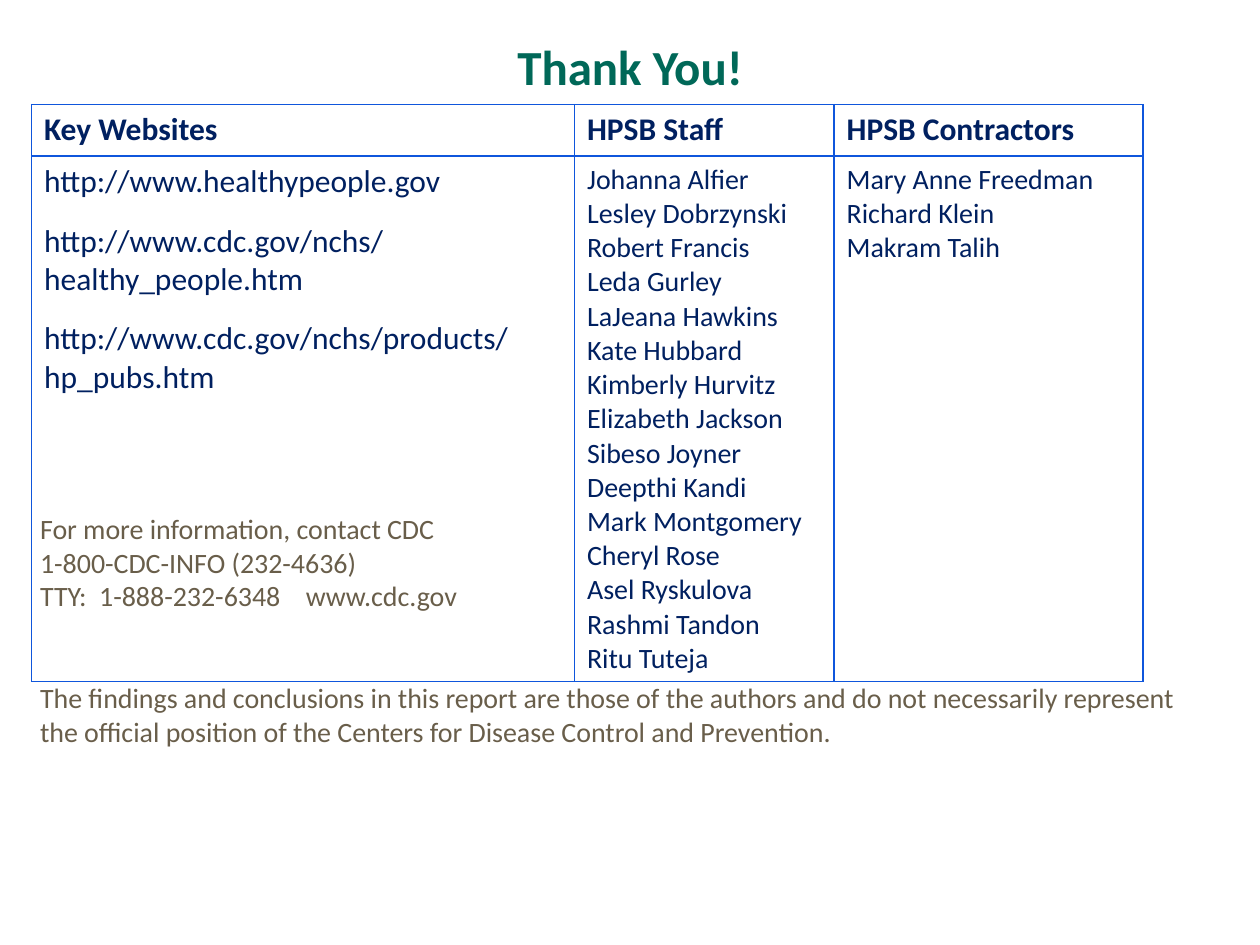
from dataclasses import dataclass

from lxml import etree
from pptx import Presentation
from pptx.dml.color import RGBColor
from pptx.enum.text import MSO_ANCHOR, MSO_AUTO_SIZE, PP_ALIGN
from pptx.oxml.ns import qn
from pptx.util import Inches, Pt

MIDDLE = MSO_ANCHOR.MIDDLE
CENTER = PP_ALIGN.CENTER
NO_FIT = MSO_AUTO_SIZE.NONE
TITLE_ONLY = 5


@dataclass(frozen=True)
class Theme:
    font: str = "Calibri"
    green: str = "006858"
    navy: str = "002060"
    brown: str = "695E4A"
    rule: str = "0F56DC"
    title: int = 28
    large: int = 18
    body: int = 16


HEADS = ["Key Websites", "HPSB Staff", "HPSB Contractors"]
SITES = [
    "http://www.healthypeople.gov",
    "http://www.cdc.gov/nchs/healthy_people.htm",
    "http://www.cdc.gov/nchs/products/hp_pubs.htm",
]
STAFF = [
    "Johanna Alfier", "Lesley Dobrzynski", "Robert Francis", "Leda Gurley",
    "LaJeana Hawkins", "Kate Hubbard", "Kimberly Hurvitz",
    "Elizabeth Jackson", "Sibeso Joyner", "Deepthi Kandi",
    "Mark Montgomery", "Cheryl Rose", "Asel Ryskulova", "Rashmi Tandon",
    "Ritu Tuteja",
]
HELPERS = ["Mary Anne Freedman", "Richard Klein", "Makram Talih"]
CONTACT = [
    "For more information, contact CDC",
    "1-800-CDC-INFO (232-4636)",
    "TTY:  1-888-232-6348\twww.cdc.gov",
]
NOTICE = (
    "The findings and conclusions in this report are those of the authors "
    "and do not necessarily represent the official position of the Centers "
    "for Disease Control and Prevention."
)


class Page:
    """Holds the theme and the slide being built."""

    def __init__(self, slide, theme):
        self.slide = slide
        self.theme = theme

    def fill(self, frame, lines, size, color, bold=False, **layout):
        """Fill a frame, one paragraph a line; layout sets paragraph values."""
        look = {"name": self.theme.font, "size": Pt(size), "bold": bold}
        for i, line in enumerate(lines):
            para = frame.add_paragraph() if i else frame.paragraphs[0]
            run = para.add_run()
            run.text = line
            run.font.color.rgb = RGBColor.from_string(color)
            for key, value in look.items():
                setattr(run.font, key, value)
            for key, value in layout.items():
                setattr(para, key, value)
        return frame.paragraphs

    def title(self, text, box):
        shape = self.slide.shapes.title
        for key, value in zip(("left", "top", "width", "height"), box):
            setattr(shape, key, Inches(value))
        frame = shape.text_frame
        frame.auto_size = NO_FIT
        frame.vertical_anchor = MIDDLE
        self.fill(frame, [text], self.theme.title, self.theme.green,
                  bold=True, alignment=CENTER)

    def text(self, lines, box):
        shape = self.slide.shapes.add_textbox(*map(Inches, box))
        shape.text_frame.word_wrap = True
        return self.fill(shape.text_frame, lines, self.theme.body,
                         self.theme.brown)

    def tab(self, para, place):
        """Put a left tab stop at a distance from the text edge."""
        stops = etree.SubElement(para._p.get_or_add_pPr(), qn("a:tabLst"))
        etree.SubElement(stops, qn("a:tab"), pos=str(Inches(place)), algn="l")

    def border(self, cell):
        props = cell._tc.get_or_add_tcPr()
        for i, side in enumerate(("lnL", "lnR", "lnT", "lnB")):
            line = etree.Element(qn(f"a:{side}"), w=str(Pt(1)))
            paint = etree.SubElement(line, qn("a:solidFill"))
            etree.SubElement(paint, qn("a:srgbClr"), val=self.theme.rule)
            props.insert(i, line)

    def table(self, heads, bodies, left, top, widths, heights):
        """Draw heads over bodies; a body is (lines, size, layout)."""
        look = self.theme
        table = self.slide.shapes.add_table(
            len(heights), len(widths), Inches(left), Inches(top),
            Inches(sum(widths)), Inches(sum(heights))).table
        table.horz_banding = False
        for col, width in zip(table.columns, widths):
            col.width = Inches(width)
        for row, height in zip(table.rows, heights):
            row.height = Inches(height)
        for i, (head, (lines, size, layout)) in enumerate(zip(heads, bodies)):
            self.fill(table.cell(0, i).text_frame, [head], look.large,
                      look.navy, bold=True)
            self.fill(table.cell(1, i).text_frame, lines, size, look.navy,
                      **layout)
        for cell in table.iter_cells():
            cell.fill.background()
            self.border(cell)


def main():
    deck = Presentation()
    deck.slide_width, deck.slide_height = Inches(10), Inches(7.5)
    theme = Theme()
    page = Page(deck.slides.add_slide(deck.slide_layouts[TITLE_ONLY]), theme)

    paras = page.text([*CONTACT, NOTICE], (0.22, 4.01, 9.27, 1.99))
    page.tab(paras[2], 2.11)
    paras[3].space_before = Pt(39)

    page.title("Thank You!", (0, 0.14, 10, 0.77))
    gaps = {"space_before": Pt(6), "space_after": Pt(6)}
    bodies = [
        (SITES, theme.large, gaps),
        (STAFF, theme.body, {}),
        (HELPERS, theme.body, {}),
    ]
    page.table(HEADS, bodies, 0.25, 0.83, (4.31, 2.06, 2.45), (0.41, 4.17))
    deck.save("out.pptx")


if __name__ == "__main__":
    main()
